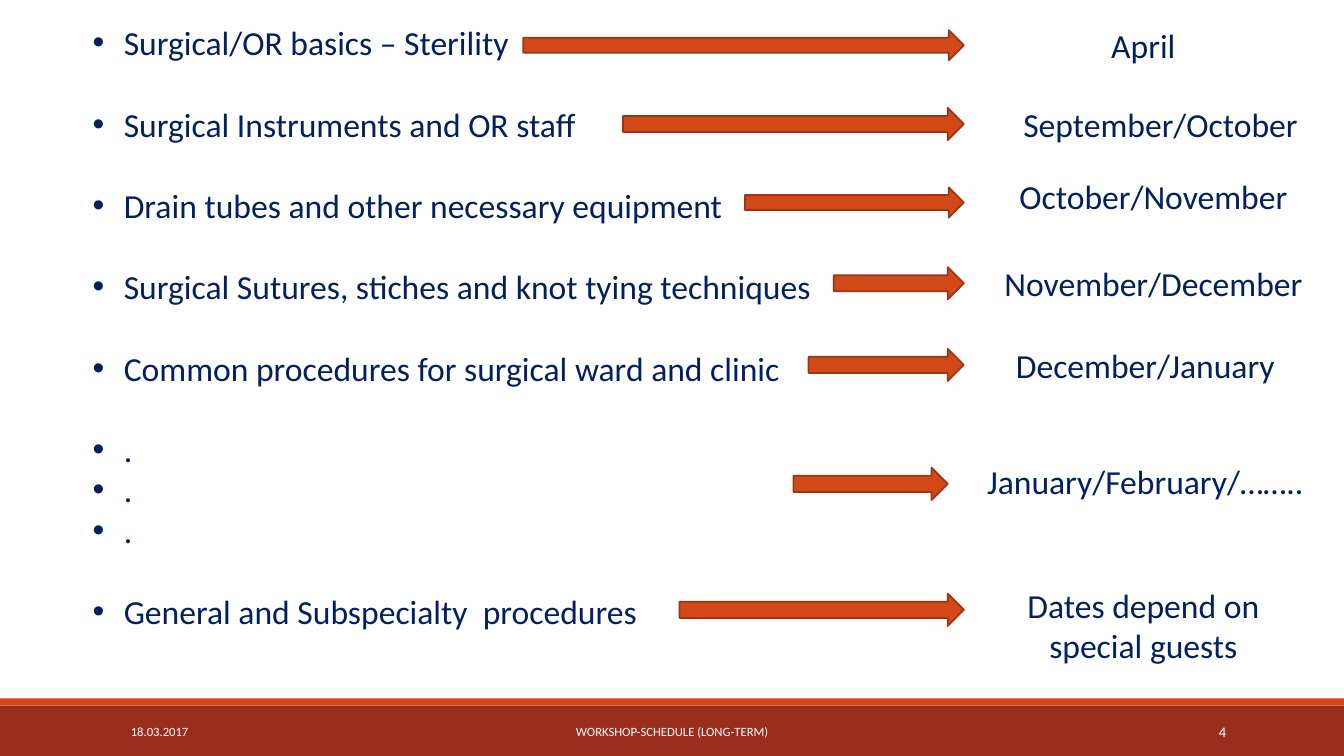
from dataclasses import dataclass
from lxml.etree import SubElement
from pptx import Presentation
from pptx.dml.color import RGBColor
from pptx.enum.shapes import MSO_SHAPE
from pptx.enum.text import MSO_ANCHOR, MSO_AUTO_SIZE, PP_ALIGN
from pptx.oxml.ns import qn
from pptx.util import Inches, Pt


@dataclass(frozen=True)
class Theme:
    font: str = "Calibri"
    ink: str = "002060"
    light: str = "FFFFFF"
    accent: str = "D34817"
    edge: str = "9C3511"
    base: str = "9B2D1F"
    body: float = 24
    small: float = 9
    number: float = 10.5
    gap: float = 29.3


class Board:
    def __init__(self, slide, theme):
        self.slide = slide
        self.theme = theme

    def shape(self, kind, left, top, width, height, fill, edge=None):
        item = self.slide.shapes.add_shape(
            kind, Inches(left), Inches(top), Inches(width), Inches(height))
        item.shadow.inherit = False
        item.fill.solid()
        item.fill.fore_color.rgb = RGBColor.from_string(fill)
        if edge:
            item.line.color.rgb = RGBColor.from_string(edge)
            item.line.width = Pt(1.25)
        else:
            item.line.fill.background()

    def bar(self, top, height, fill):
        self.shape(MSO_SHAPE.RECTANGLE, 0, top, 13.33, height, fill)

    def arrow(self, left, top, right, height):
        self.shape(MSO_SHAPE.RIGHT_ARROW, left, top, right - left, height,
                   self.theme.accent, self.theme.edge)

    def frame(self, left, top, width, height):
        box = self.slide.shapes.add_textbox(
            Inches(left), Inches(top), Inches(width), Inches(height))
        box.text_frame.word_wrap = True
        return box.text_frame

    def label(self, para, text, size, color):
        run = para.add_run()
        run.text = text
        run.font.name = self.theme.font
        run.font.size = Pt(size)
        run.font.color.rgb = RGBColor.from_string(color)

    def footer(self, text, left, width, size, align):
        frame = self.frame(left, 7.06, width, 0.4)
        frame.vertical_anchor = MSO_ANCHOR.MIDDLE
        para = frame.paragraphs[0]
        para.alignment = align
        self.label(para, text, size, self.theme.light)

    def date(self, text, left, top, width, height=0.5):
        frame = self.frame(left, top, width, height)
        frame.auto_size = MSO_AUTO_SIZE.SHAPE_TO_FIT_TEXT
        para = frame.paragraphs[0]
        para.alignment = PP_ALIGN.CENTER
        self.label(para, text, self.theme.body, self.theme.ink)

    def bullets(self, items, left, top, width, height):
        """Items are (text, spaced) pairs; spaced ones get a line of room above."""
        frame = self.frame(left, top, width, height)
        for index, (text, spaced) in enumerate(items):
            para = frame.add_paragraph() if index else frame.paragraphs[0]
            props = para._p.get_or_add_pPr()
            props.set("marL", str(Inches(0.31)))
            props.set("indent", str(-Inches(0.31)))
            SubElement(props, qn("a:buFont"), typeface="Arial")
            SubElement(props, qn("a:buChar"), char="•")
            if spaced:
                para.space_before = Pt(self.theme.gap)
            self.label(para, text, self.theme.body, self.theme.ink)


TOPICS = [
    ("Surgical/OR basics – Sterility", False),
    ("Surgical Instruments and OR staff", True),
    ("Drain tubes and other necessary equipment", True),
    ("Surgical Sutures, stiches and knot tying techniques", True),
    ("Common procedures for surgical ward and clinic", True),
    (".", True),
    (".", False),
    (".", False),
    ("General and Subspecialty  procedures", True),
]

# left, top, right, height
ARROWS = [
    (5.19, 0.3, 9.56, 0.3),
    (6.18, 1.07, 9.56, 0.32),
    (7.39, 1.86, 9.56, 0.3),
    (8.27, 2.65, 9.56, 0.32),
    (8.02, 3.46, 9.56, 0.32),
    (7.87, 4.64, 9.4, 0.32),
    (6.74, 5.89, 9.56, 0.32),
]

# text, left, top, width and, for two lines, height
DATES = [
    ("April", 9.9, 0.2, 2.88),
    ("September/October", 9.9, 0.98, 3.22),
    ("October/November", 9.83, 1.7, 3.22),
    ("November/December", 9.83, 2.56, 3.22),
    ("December/January", 9.75, 3.37, 3.22),
    ("January/February/……..", 9.56, 4.52, 3.6),
    ("Dates depend on special guests", 9.73, 5.75, 3.22, 0.91),
]


def main():
    deck = Presentation()
    deck.slide_width = Inches(13.33)
    deck.slide_height = Inches(7.5)
    theme = Theme()
    board = Board(deck.slides.add_slide(deck.slide_layouts[6]), theme)

    board.bar(7, 0.5, theme.base)
    board.bar(6.93, 0.07, theme.accent)
    board.footer("18.03.2017", 1.2, 2.7, theme.small, PP_ALIGN.LEFT)
    board.footer("WORKSHOP-SCHEDULE (LONG-TERM)", 4.03, 5.27,
                 theme.small, PP_ALIGN.CENTER)
    board.footer("4", 10.83, 1.43, theme.number, PP_ALIGN.RIGHT)

    board.bullets(TOPICS, 0.82, 0.17, 8.74, 6.16)
    for arrow in ARROWS:
        board.arrow(*arrow)
    for date in DATES:
        board.date(*date)

    deck.save("out.pptx")


if __name__ == "__main__":
    main()
